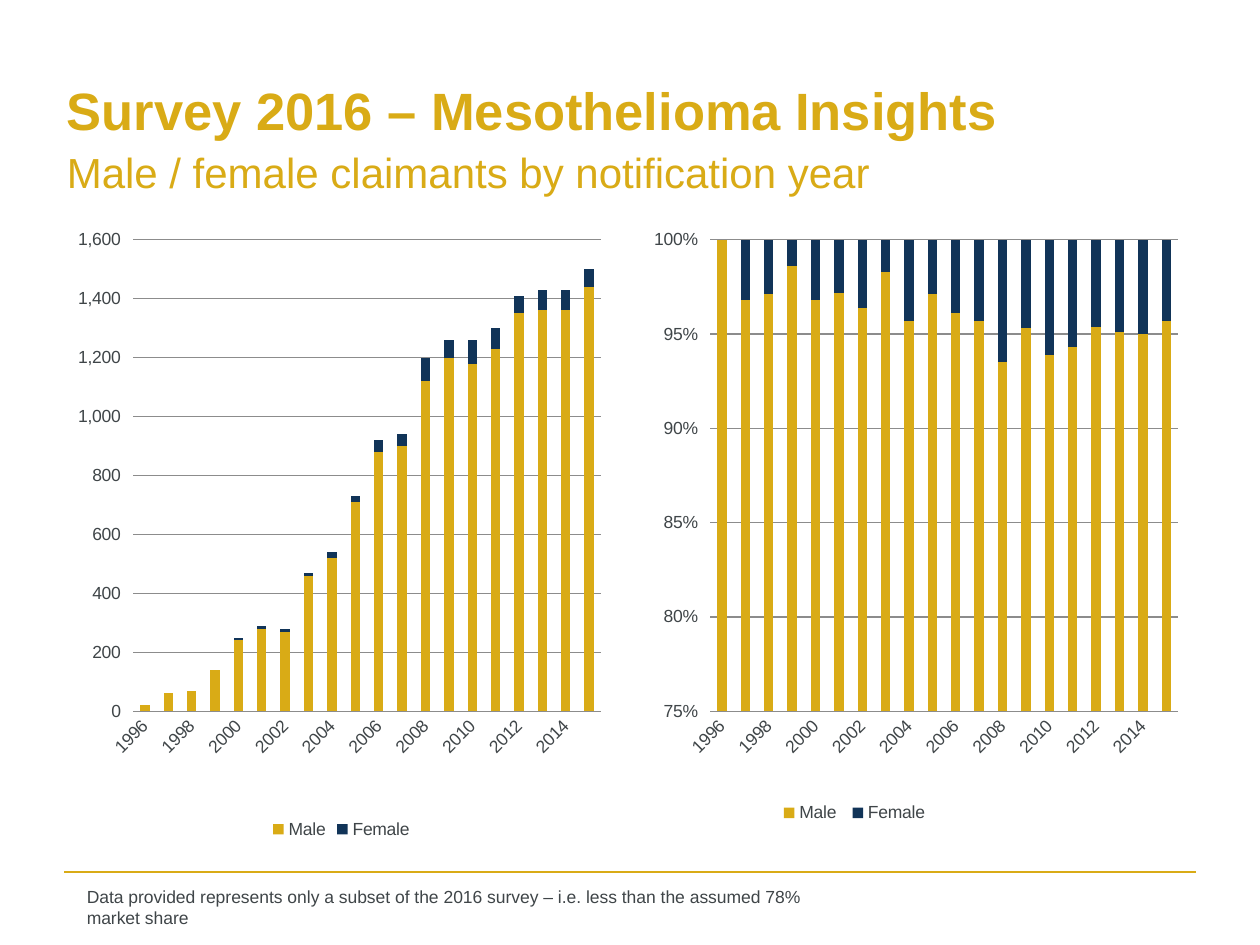
from lxml.etree import SubElement
from pptx import Presentation
from pptx.chart.data import CategoryChartData
from pptx.dml.color import RGBColor
from pptx.enum.chart import XL_CHART_TYPE as ChartType, XL_LEGEND_POSITION as LegendPos
from pptx.enum.chart import XL_TICK_MARK as Tick
from pptx.enum.shapes import MSO_CONNECTOR as Connector
from pptx.enum.text import MSO_ANCHOR as Anchor, MSO_AUTO_SIZE as AutoSize, PP_ALIGN as Align
from pptx.oxml import parse_xml
from pptx.oxml.ns import nsdecls, qn
from pptx.util import Inches, Pt

GOLD, NAVY, SLATE, GREY = "D9AB16", "113458", "3F4548", "8C8C8C"

YEARS = [str(year) for year in range(1996, 2016)]
MALE = [20, 60, 70, 140, 240, 280, 270, 460, 520, 710,
        880, 900, 1120, 1200, 1180, 1230, 1350, 1360, 1360, 1440]
FEMALE = [0, 0, 0, 0, 10, 10, 10, 10, 20, 20,
          40, 40, 80, 60, 80, 70, 60, 70, 70, 60]
MALE_SHARE = [1, 0.968, 0.971, 0.986, 0.968, 0.972, 0.964, 0.983, 0.957, 0.971,
              0.961, 0.957, 0.935, 0.953, 0.939, 0.943, 0.954, 0.951, 0.95, 0.957]
FEMALE_SHARE = [round(1 - share, 3) for share in MALE_SHARE]


def color(hex_string):
    return RGBColor.from_string(hex_string)


class SurveySlide:
    """Style and current slide; lengths are inches on a 10 by 7.5 page."""

    font = "Arial"
    margin, gutter, columns = 0.5, 0.16, 2

    def __init__(self, deck):
        self.slide = deck.slides.add_slide(deck.slide_layouts[5])
        self.page_width = deck.slide_width / Inches(1)
        free = self.page_width - 2 * self.margin - self.gutter * (self.columns - 1)
        self.column_width = free / self.columns

    def style(self, font, size, hex_string, bold=False):
        font.name, font.size, font.bold = self.font, Pt(size), bold
        font.color.rgb = color(hex_string)

    def add_run(self, paragraph, text, size, hex_string, bold=False):
        run = paragraph.add_run()
        run.text = text
        self.style(run.font, size, hex_string, bold)

    def title(self, heading, subheading):
        title = self.slide.shapes.title
        title.left, title.top = Inches(0.43), Inches(0.44)
        title.width, title.height = Inches(9.07), Inches(1.25)
        title.text_frame.vertical_anchor = Anchor.MIDDLE
        paragraph = title.text_frame.paragraphs[0]
        paragraph.alignment, paragraph.line_spacing = Align.LEFT, 1.1
        self.add_run(paragraph, heading, 30, GOLD, bold=True)
        paragraph.add_line_break()
        self.add_run(paragraph, subheading, 24, GOLD)

    def rule(self, top):
        inset = self.margin + 0.01
        line = self.slide.shapes.add_connector(
            Connector.STRAIGHT, Inches(inset), Inches(top),
            Inches(self.page_width - inset), Inches(top))
        line.line.color.rgb, line.line.width = color(GOLD), Pt(1)
        SubElement(line._element.spPr, qn("a:effectLst"))

    def note(self, text, left, top, width, height):
        box = self.slide.shapes.add_textbox(
            Inches(left), Inches(top), Inches(width), Inches(height))
        box.text_frame.word_wrap = True
        box.text_frame.auto_size = AutoSize.SHAPE_TO_FIT_TEXT
        self.add_run(box.text_frame.paragraphs[0], text, 10, SLATE)

    def stacked_chart(self, column, male, female, number_format,
                      scale, legend_place=None):
        data = CategoryChartData(number_format)
        data.categories = YEARS
        data.add_series("Male", male)
        data.add_series("Female", female)
        left = self.margin + column * (self.column_width + self.gutter)
        chart = self.slide.shapes.add_chart(
            ChartType.COLUMN_STACKED, Inches(left), Inches(1.75),
            Inches(self.column_width), Inches(4.95), data).chart
        chart.has_title = False
        self.style(chart.font, 10, SLATE)

        # Columns
        plot = chart.plots[0]
        plot.gap_width, plot.overlap, plot.vary_by_categories = 150, 100, False
        for series, fill in zip(plot.series, (GOLD, NAVY)):
            series.format.fill.solid()
            series.format.fill.fore_color.rgb = color(fill)

        # Axes
        years, amounts = chart.category_axis, chart.value_axis
        years.major_tick_mark = Tick.NONE
        years.format.line.color.rgb = color(GREY)
        self.style(years.tick_labels.font, 10, SLATE)
        years._element.txPr.find(qn("a:bodyPr")).set("rot", str(-45 * 60000))
        amounts.minimum_scale, amounts.maximum_scale, amounts.major_unit = scale
        amounts.major_tick_mark = Tick.OUTSIDE
        amounts.format.line.fill.background()
        amounts.has_major_gridlines = True
        amounts.major_gridlines.format.line.color.rgb = color(GREY)
        amounts.tick_labels.number_format = number_format
        amounts.tick_labels.number_format_is_linked = False

        # Legend and plot placement
        chart.has_legend = True
        chart.legend.position = LegendPos.BOTTOM
        chart.legend.include_in_layout = False
        plot_area = chart._chartSpace.chart.plotArea
        self.place(plot_area, 0, (0.126, 0.031, 0.84, 0.756), inner=True)
        if legend_place:
            self.place(chart.legend._element, 1, legend_place)

    @staticmethod
    def place(part, index, shares, inner=False):
        for old in part.findall(qn("c:layout")):
            part.remove(old)
        target = '<c:layoutTarget val="inner"/>' if inner else ""
        modes = "".join(f'<c:{side}Mode val="edge"/>' for side in "xy")
        sizes = "".join(f'<c:{side} val="{share}"/>' for side, share in zip("xywh", shares))
        part.insert(index, parse_xml(
            f'<c:layout {nsdecls("c")}><c:manualLayout>{target}{modes}{sizes}'
            '</c:manualLayout></c:layout>'))


def main():
    deck = Presentation()
    deck.slide_width, deck.slide_height = Inches(10), Inches(7.5)
    survey = SurveySlide(deck)

    # Heading
    survey.rule(6.92)
    survey.title("Survey 2016 – Mesothelioma Insights",
                 "Male / female claimants by notification year")

    # Claimant numbers, then shares
    survey.stacked_chart(0, MALE, FEMALE, "#,##0", (0, 1600, 200))
    survey.stacked_chart(1, MALE_SHARE, FEMALE_SHARE, "0%", (0.75, 1, 0.05),
                         legend_place=(0.24, 0.92, 0.29, 0.06))

    # Footnote
    survey.note("Data provided represents only a subset of the 2016 survey – "
                "i.e. less than the assumed 78% market share",
                0.59, 6.98, 6.18, 0.27)
    deck.save("out.pptx")


if __name__ == "__main__":
    main()
